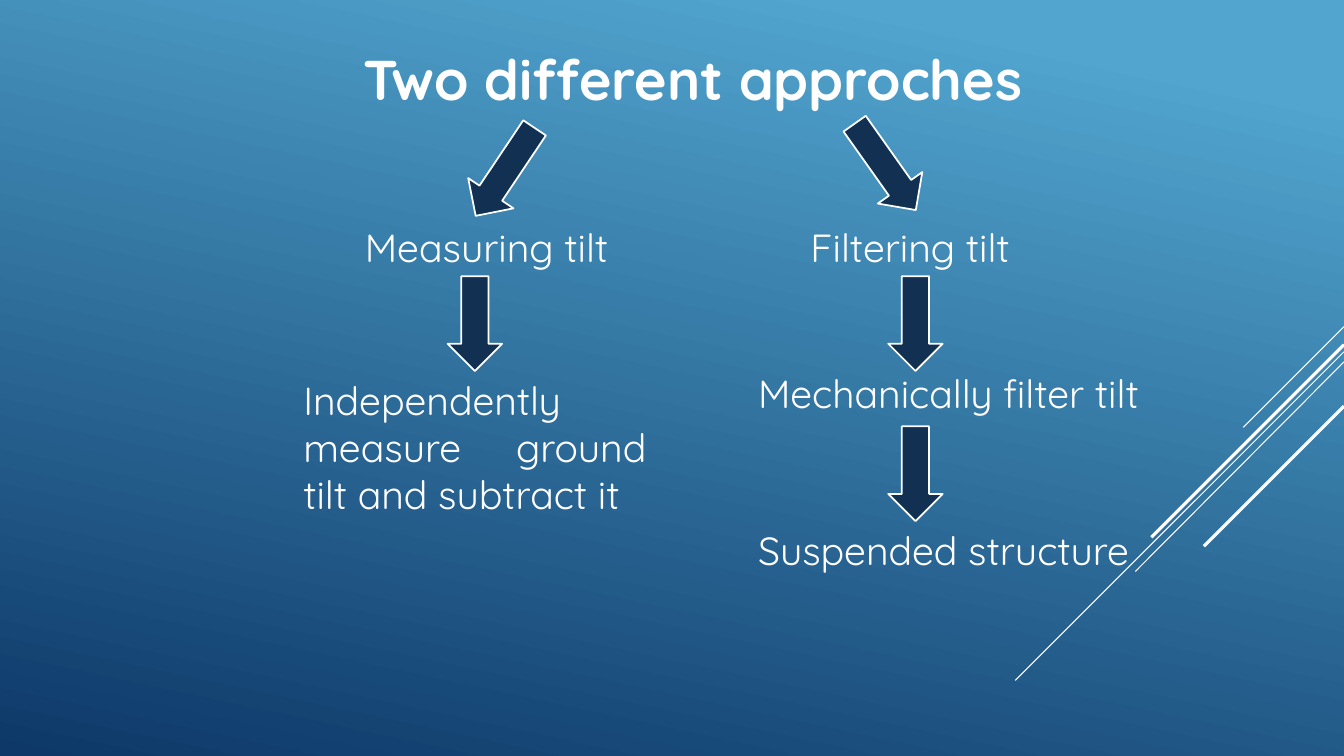
from dataclasses import dataclass

from lxml.etree import SubElement
from pptx import Presentation
from pptx.dml.color import RGBColor
from pptx.enum.shapes import MSO_CONNECTOR as Connector, MSO_SHAPE as Preset
from pptx.enum.text import MSO_ANCHOR as Anchor, MSO_AUTO_SIZE as AutoSize, PP_ALIGN as Align
from pptx.oxml.ns import qn
from pptx.shapes.base import BaseShape
from pptx.slide import Slide
from pptx.util import Emu, Pt

EMU_PER_PX = 9144  # 100 px to the inch
WIDTH, HEIGHT = 1333, 750
FONT = "Quicksand"
WHITE = RGBColor(0xFF, 0xFF, 0xFF)
NAVY = RGBColor(0x11, 0x30, 0x52)
SKY = RGBColor(0x51, 0xA5, 0xCF)
DEEP_BLUE = RGBColor(0x0D, 0x38, 0x68)


@dataclass(frozen=True)
class Ray:
    """A diagonal line running down and left from the right edge."""
    top: int
    end_x: int
    end_y: int
    weight: float = 0.75


@dataclass(frozen=True)
class Label:
    text: str
    left: int
    top: int
    width: int
    height: int = 57
    align: Align = Align.LEFT
    wrap: bool = False


@dataclass(frozen=True)
class Arrow:
    left: int
    top: int
    height: int = 94
    rotation: float = 0


RAYS = (
    Ray(324, 1233, 424),
    Ray(349, 1007, 675),
    Ray(359, 1126, 567),
    Ray(342, 1142, 533, weight=2.25),
    Ray(403, 1194, 542, weight=2.25),
)
LABELS = (
    Label("Measuring tilt", 352, 217, 271),
    Label("Independently measure ground tilt and subtract it", 291, 368, 360, 151,
          align=Align.JUSTIFY, wrap=True),
    Label("Filtering tilt", 794, 217, 228),
    Label("Mechanically filter tilt", 742, 361, 422),
    Label("Suspended structure", 742, 517, 410),
)
ARROW_WIDTH = 54
MEASURING_X, FILTERING_X = 444, 881
ARROWS = (
    Arrow(474, 118, height=105, rotation=33.8),
    Arrow(851, 113, height=105, rotation=324.7),
    Arrow(MEASURING_X, 274),
    Arrow(FILTERING_X, 274),
    Arrow(FILTERING_X, 423),
)


def px(length: int) -> Emu:
    return Emu(length * EMU_PER_PX)


def paint_background(slide: Slide) -> None:
    fill = slide.background.fill
    fill.gradient()
    fill.gradient_angle = 360 - 102  # the property counts counter-clockwise
    for stop, position, color in zip(fill.gradient_stops, (0.1, 1), (SKY, DEEP_BLUE)):
        stop.position = position
        stop.color.rgb = color


def write_text(shape: BaseShape, text: str, *, size: int = 28, bold: bool = False,
               align: Align = Align.LEFT, wrap: bool = True) -> None:
    frame = shape.text_frame
    frame.text = text
    frame.word_wrap = wrap
    frame.auto_size = AutoSize.SHAPE_TO_FIT_TEXT
    frame.vertical_anchor = Anchor.TOP
    paragraph = frame.paragraphs[0]
    paragraph.alignment = align
    font = paragraph.runs[0].font
    font.name, font.size, font.bold = FONT, Pt(size), bold
    font.color.rgb = WHITE


def set_title(slide: Slide, text: str) -> None:
    title = slide.shapes.title
    title.left, title.top, title.width, title.height = map(px, (102, 39, 1170, 77))
    write_text(title, text, size=40, bold=True, align=Align.CENTER)


def draw_ray(slide: Slide, ray: Ray) -> None:
    line = slide.shapes.add_connector(
        Connector.STRAIGHT, px(WIDTH), px(ray.top), px(ray.end_x), px(ray.end_y))
    line.line.color.rgb = WHITE
    line.line.width = Pt(ray.weight)
    SubElement(line._element.spPr, qn("a:effectLst"))


def draw_label(slide: Slide, label: Label) -> None:
    box = slide.shapes.add_textbox(
        px(label.left), px(label.top), px(label.width), px(label.height))
    write_text(box, label.text, align=label.align, wrap=label.wrap)


def draw_arrow(slide: Slide, arrow: Arrow) -> None:
    shape = slide.shapes.add_shape(
        Preset.DOWN_ARROW, px(arrow.left), px(arrow.top), px(ARROW_WIDTH), px(arrow.height))
    shape.rotation = arrow.rotation
    shape.shadow.inherit = False
    shape.fill.solid()
    shape.fill.fore_color.rgb = NAVY
    shape.line.color.rgb = WHITE
    shape.line.width = Pt(1.25)


def main() -> None:
    presentation = Presentation()
    presentation.slide_width, presentation.slide_height = px(WIDTH), px(HEIGHT)
    title_only = presentation.slide_layouts.get_by_name("Title Only")
    slide = presentation.slides.add_slide(title_only)
    paint_background(slide)
    set_title(slide, "Two different approches")
    for ray in RAYS:
        draw_ray(slide, ray)
    for label in LABELS:
        draw_label(slide, label)
    for arrow in ARROWS:
        draw_arrow(slide, arrow)
    presentation.save("out.pptx")


if __name__ == "__main__":
    main()
